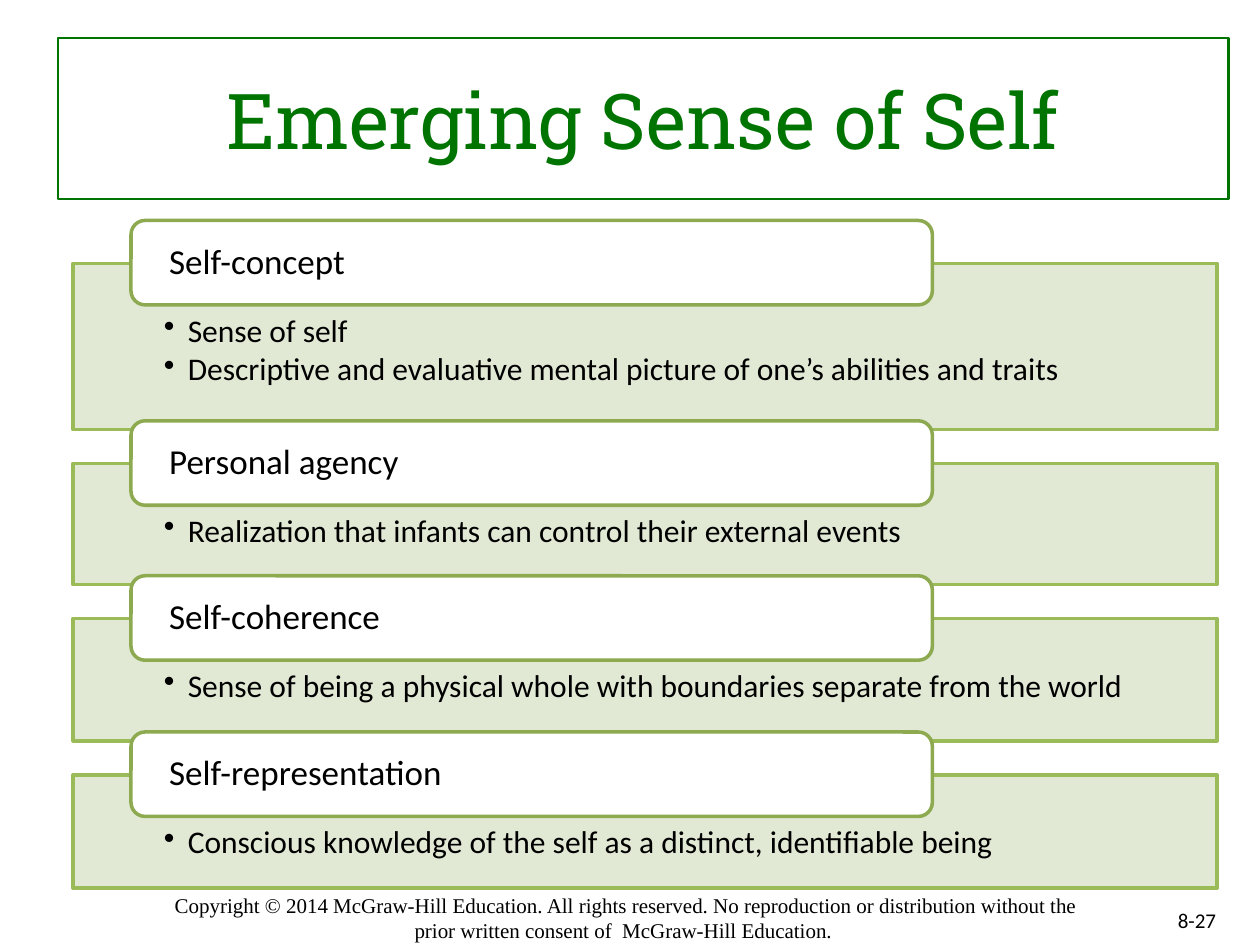
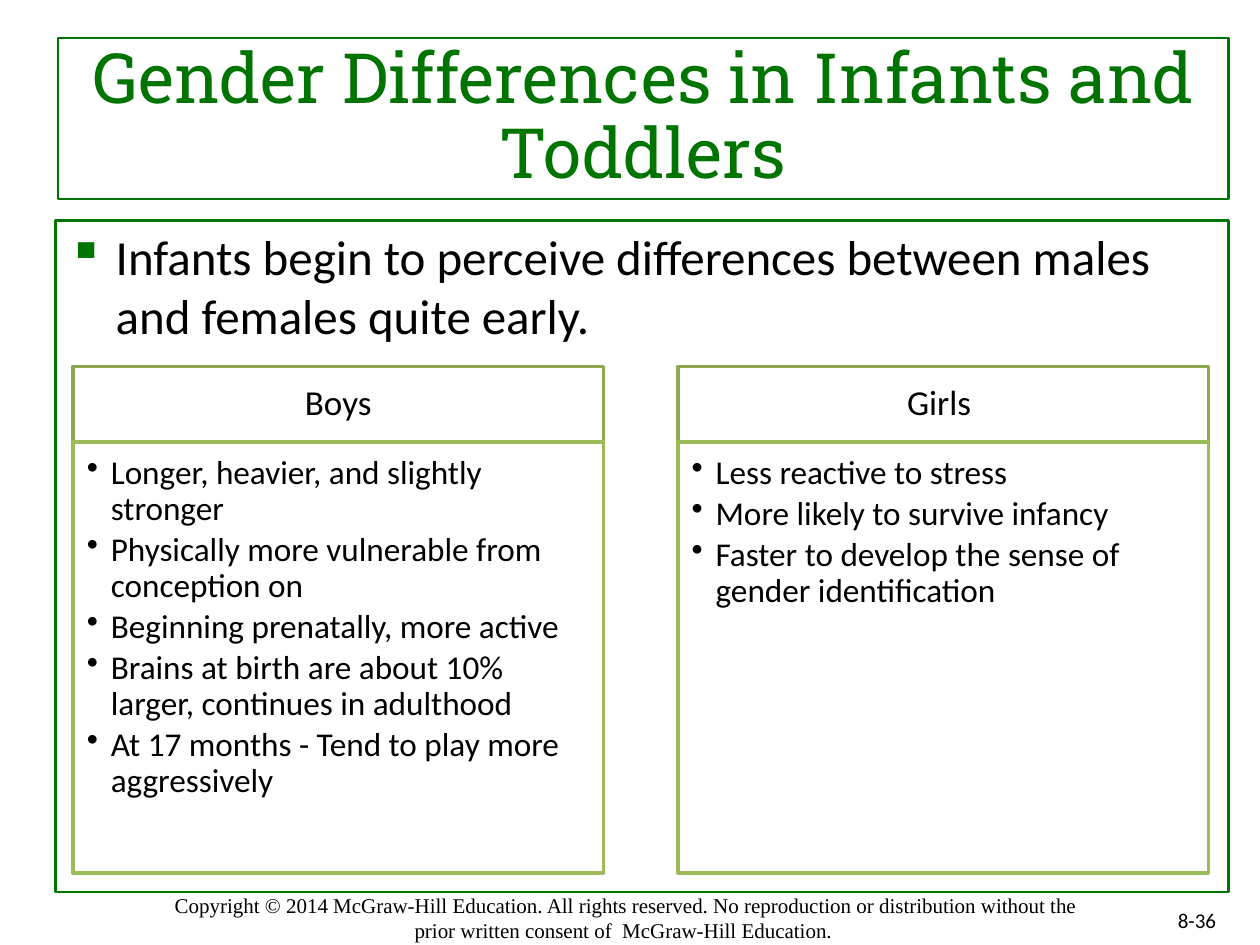
from dataclasses import dataclass

from lxml.etree import SubElement
from pptx import Presentation
from pptx.dml.color import RGBColor
from pptx.enum.shapes import MSO_SHAPE as SHAPE
from pptx.enum.text import MSO_ANCHOR as ANCHOR, PP_ALIGN as ALIGN
from pptx.oxml.ns import qn
from pptx.util import Inches, Pt

COLORS = {
    "green": "007400",
    "header_line": "8DAA51",
    "panel_line": "9BBB59",
    "panel": "DEE7D1",
    "white": "FFFFFF",
    "black": "000000",
}
TITLE_FONT, BODY_FONT, FOOTER_FONT = "Roboto Slab", "Calibri", "Times New Roman"
COPYRIGHT = (
    "Copyright © 2014 McGraw-Hill Education. All rights reserved. "
    "No reproduction or distribution without the prior written consent of  "
    "McGraw-Hill Education. "
)


@dataclass(frozen=True)
class Box:
    left: float
    top: float
    width: float
    height: float

    def emu(self) -> list:
        return [Inches(v) for v in (self.left, self.top, self.width, self.height)]


@dataclass(frozen=True)
class BoxStyle:
    line: str
    line_width: float
    fill: str | None = None
    alpha: int = 100
    shape: int = SHAPE.RECTANGLE


@dataclass(frozen=True)
class TextStyle:
    """Lengths in inches, sizes in points; insets run left, top, right, bottom."""
    size: float
    font: str = BODY_FONT
    color: str = "black"
    align: int = ALIGN.LEFT
    anchor: int = ANCHOR.TOP
    insets: tuple = (0.1, 0.05, 0.1, 0.05)
    line_spacing: float = 1.0
    space_after: float = 0
    bullet: str = ""
    bullet_color: str = "black"
    indent: float = 0


@dataclass(frozen=True)
class Topic:
    name: str
    points: list
    height: float = 0


FRAME = BoxStyle("green", 1.25)
BODY_FRAME = BoxStyle("green", 1.25, "white")
HEADER = BoxStyle("header_line", 2, "white")
TAB = BoxStyle("header_line", 2, "white", shape=SHAPE.ROUNDED_RECTANGLE)
TINTED_PANEL = BoxStyle("panel_line", 2, "panel", 90)
WHITE_PANEL = BoxStyle("panel_line", 2, "white", 90)

FOOTER_TEXT = TextStyle(12, FOOTER_FONT, align=ALIGN.CENTER, insets=(0, 0, 0, 0))
NUMBER_TEXT = TextStyle(12, align=ALIGN.RIGHT, anchor=ANCHOR.MIDDLE)
TAB_TEXT = TextStyle(20, anchor=ANCHOR.MIDDLE, insets=(0.27, 0.03, 0.27, 0.03),
                     line_spacing=0.9)
HEADER_TEXT = TextStyle(20, align=ALIGN.CENTER, anchor=ANCHOR.MIDDLE,
                        insets=(0.16, 0.09, 0.16, 0.09), line_spacing=0.9)
TINTED_TEXT = TextStyle(18, insets=(0.72, 0.41, 0.72, 0.14), line_spacing=0.9,
                        space_after=2.7, bullet="•", indent=0.19)
PANEL_TEXT = TextStyle(19, insets=(0.11, 0.11, 0.15, 0.17), line_spacing=0.9,
                       space_after=2.85, bullet="•", indent=0.19)
INTRO_TEXT = TextStyle(28, space_after=12, bullet="▪", bullet_color="green",
                       indent=0.38)

SELF_TOPICS = [
    Topic("Self-concept", [
        "Sense of self",
        "Descriptive and evaluative mental picture of one’s abilities and traits",
    ], 1.32),
    Topic("Personal agency",
          ["Realization that infants can control their external events"], 0.96),
    Topic("Self-coherence",
          ["Sense of being a physical whole with boundaries separate from the world"],
          0.97),
    Topic("Self-representation",
          ["Conscious knowledge of the self as a distinct, identifiable being"], 0.9),
]
GENDER_TOPICS = [
    Topic("Boys", [
        "Longer, heavier, and slightly stronger",
        "Physically more vulnerable from conception on",
        "Beginning prenatally, more active",
        "Brains at birth are about 10% larger, continues in adulthood",
        "At 17 months - Tend to play more aggressively",
    ]),
    Topic("Girls ", [
        "Less reactive to stress",
        "More likely to survive infancy",
        "Faster to develop the sense of gender identification",
    ]),
]


def rgb(name: str) -> RGBColor:
    return RGBColor.from_string(COLORS[name])


def add_bullet(p, style: TextStyle) -> None:
    pPr = p._p.get_or_add_pPr()
    pPr.set("marL", str(Inches(style.indent)))
    pPr.set("indent", str(-Inches(style.indent)))
    color = SubElement(pPr, qn("a:buClr"))
    SubElement(color, qn("a:srgbClr"), val=COLORS[style.bullet_color])
    SubElement(pPr, qn("a:buChar"), char=style.bullet)


def write(sp, lines: list, style: TextStyle) -> None:
    tf = sp.text_frame
    tf.word_wrap = True
    tf.vertical_anchor = style.anchor
    (tf.margin_left, tf.margin_top,
     tf.margin_right, tf.margin_bottom) = map(Inches, style.insets)
    for i, line in enumerate(lines):
        p = tf.add_paragraph() if i else tf.paragraphs[0]
        if style.bullet:
            add_bullet(p, style)
        p.alignment = style.align
        p.line_spacing = style.line_spacing
        p.space_after = Pt(style.space_after)
        r = p.add_run()
        r.text = line
        r.font.size = Pt(style.size)
        r.font.name = style.font
        r.font.color.rgb = rgb(style.color)


def add_box(slide, box: Box, look: BoxStyle, lines: list, text: TextStyle) -> None:
    sp = slide.shapes.add_shape(look.shape, *box.emu())
    sp.shadow.inherit = False
    sp.line.color.rgb = rgb(look.line)
    sp.line.width = Pt(look.line_width)
    if look.fill:
        sp.fill.solid()
        sp.fill.fore_color.rgb = rgb(look.fill)
        if look.alpha < 100:
            color = sp._element.spPr.find(qn("a:solidFill"))[0]
            SubElement(color, qn("a:alpha"), val=str(look.alpha * 1000))
    else:
        sp.fill.background()
    write(sp, lines, text)


def add_text(slide, box: Box, line: str, style: TextStyle) -> None:
    write(slide.shapes.add_textbox(*box.emu()), [line], style)


def new_slide(prs, title: str, number: str, title_size: float = 44,
              title_spacing: float = 1.0):
    """Add a slide with the shared title frame, copyright line and number."""
    slide = prs.slides.add_slide(prs.slide_layouts[6])
    add_text(slide, Box(1.27, 7.08, 7.4, 0.4), COPYRIGHT, FOOTER_TEXT)
    title_text = TextStyle(title_size, TITLE_FONT, "green", ALIGN.CENTER,
                           ANCHOR.MIDDLE, line_spacing=title_spacing)
    add_box(slide, Box(0.46, 0.3, 9.29, 1.28), FRAME, [title], title_text)
    add_text(slide, Box(7.42, 7.1, 2.33, 0.4), number, NUMBER_TEXT)
    return slide


def build_sense_of_self(prs) -> None:
    slide = new_slide(prs, "Emerging Sense of Self", "8-27")
    top, gap, tab_rise = 2.09, 0.27, 0.34
    for topic in SELF_TOPICS:
        add_box(slide, Box(0.58, top, 9.08, topic.height), TINTED_PANEL,
                topic.points, TINTED_TEXT)
        add_box(slide, Box(1.04, top - tab_rise, 6.36, 0.67), TAB,
                [topic.name], TAB_TEXT)
        top += topic.height + gap


def build_gender_differences(prs) -> None:
    slide = new_slide(prs, "Gender Differences in Infants and Toddlers", "8-36",
                      39.6, 0.9)
    add_box(slide, Box(0.44, 1.75, 9.31, 5.33), BODY_FRAME,
            ["Infants begin to perceive differences between males "
             "and females quite early."], INTRO_TEXT)
    top, header_height, width, pitch = 2.91, 0.6, 4.21, 4.8
    for i, topic in enumerate(GENDER_TOPICS):
        left = 0.58 + i * pitch
        add_box(slide, Box(left, top, width, header_height), HEADER,
                [topic.name], HEADER_TEXT)
        add_box(slide, Box(left, top + header_height, width, 3.42), WHITE_PANEL,
                topic.points, PANEL_TEXT)


def main() -> None:
    prs = Presentation()
    prs.slide_width, prs.slide_height = Inches(10), Inches(7.5)
    build_sense_of_self(prs)
    build_gender_differences(prs)
    prs.save("out.pptx")


if __name__ == "__main__":
    main()
